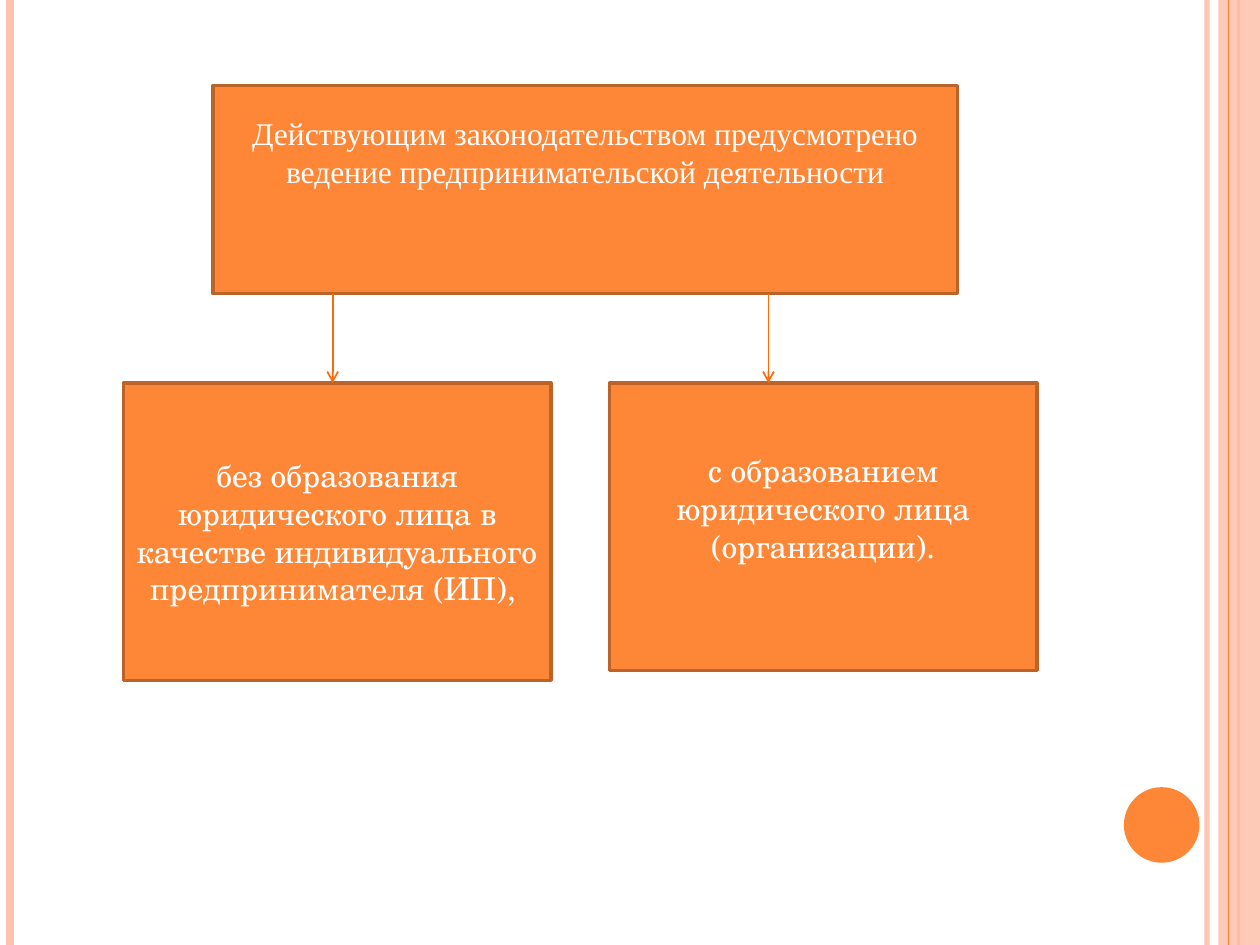
from collections import namedtuple

from lxml import etree
from pptx import Presentation
from pptx.dml.color import RGBColor
from pptx.enum.shapes import MSO_CONNECTOR, MSO_SHAPE
from pptx.enum.text import MSO_ANCHOR, PP_ALIGN
from pptx.oxml.ns import qn
from pptx.util import Inches, Pt

Box = namedtuple("Box", "left top width height")

PAGE = Box(0, 0, 10, 7.5)
ORANGE, PINK, BROWN, ARROW, WHITE = "FE8637", "FEC3AE", "BC6329", "FF6B0A", "FFFFFF"
SERIF, SCHOOL = "Times New Roman", "TeX Gyre Schola"
LINE_HEIGHT = 0.3


def color(hex_string):
    return RGBColor.from_string(hex_string)


def set_alpha(properties, percent):
    """Make the first solid colour inside the given XML partly transparent."""
    solid = next(properties.iter(qn("a:srgbClr")))
    etree.SubElement(solid, qn("a:alpha"), val=str(percent * 1000))


def add_block(slide, kind, box, fill, line=None, alpha=None):
    shape = slide.shapes.add_shape(kind, *map(Inches, box))
    shape.shadow.inherit = False
    shape.fill.solid()
    shape.fill.fore_color.rgb = color(fill)
    if alpha:
        set_alpha(shape.fill._xPr, alpha)
    if line:
        shape.line.color.rgb = color(line)
        shape.line.width = Pt(2)
    else:
        shape.line.fill.background()
    return shape


def add_vertical(slide, x, top, bottom, line, width, alpha=None, arrow=False):
    connector = slide.shapes.add_connector(
        MSO_CONNECTOR.STRAIGHT, *map(Inches, (x, top, x, bottom)))
    connector.line.color.rgb = color(line)
    connector.line.width = Pt(width)
    properties = connector._element.spPr
    if alpha:
        set_alpha(properties, alpha)
    if arrow:
        etree.SubElement(properties.find(qn("a:ln")), qn("a:tailEnd"), type="arrow")
    etree.SubElement(properties, qn("a:effectLst"))


def write(shape, text, font=SCHOOL, size=18, fill=WHITE, raised_lines=0):
    """Centre the text, lifted as if some lines stood free below it."""
    frame = shape.text_frame
    frame.word_wrap = True
    frame.vertical_anchor = MSO_ANCHOR.MIDDLE
    frame.margin_bottom = Inches(0.05 + raised_lines * LINE_HEIGHT)
    paragraph = frame.paragraphs[0]
    paragraph.alignment = PP_ALIGN.CENTER
    run = paragraph.add_run()
    run.text = text
    run.font.name = font
    run.font.size = Pt(size)
    run.font.color.rgb = color(fill)


def draw_frame(slide, box):
    """Place the edge stripes and the circle of the page design."""
    def stripe(share, *style, **options):
        add_vertical(slide, box.left + share * box.width, box.top,
                     box.top + box.height, *style, **options)

    stripe(0.958, PINK, 3, alpha=93)
    stripe(0.008, PINK, 4.5)
    stripe(0.983, ORANGE, 1.5)
    band = Box(box.left + 0.967 * box.width, box.top, 0.033 * box.width, box.height)
    add_block(slide, MSO_SHAPE.RECTANGLE, band, PINK, alpha=87)
    stripe(0.975, ORANGE, 0.75)
    diameter = 0.06 * box.width
    circle = Box(box.left + 0.892 * box.width, box.top + 0.833 * box.height,
                 diameter, diameter)
    add_block(slide, MSO_SHAPE.OVAL, circle, ORANGE)


def draw_diagram(slide, box):
    """Place the heading block, its two branches and the arrows between them."""
    def part(left, top, width, height):
        return Box(box.left + left * box.width, box.top + top * box.height,
                   width * box.width, height * box.height)

    heading = part(0.098, 0, 0.815, 0.35)
    branches = [
        (part(0, 0.5, 0.468, 0.5), 0.229, 0,
         "без образования юридического лица в качестве индивидуального "
         "предпринимателя (ИП), "),
        (part(0.532, 0.5, 0.468, 0.483), 0.706, 1,
         "с образованием юридического лица (организации)."),
    ]
    block = add_block(slide, MSO_SHAPE.RECTANGLE, heading, ORANGE, BROWN)
    write(block, "Действующим законодательством предусмотрено ведение "
          "предпринимательской деятельности", font=SERIF, raised_lines=2)
    for branch, arrow_share, raised_lines, text in branches:
        block = add_block(slide, MSO_SHAPE.RECTANGLE, branch, ORANGE, BROWN)
        write(block, text, raised_lines=raised_lines)
        add_vertical(slide, box.left + arrow_share * box.width,
                     heading.top + heading.height, branch.top, ARROW, 1, arrow=True)


def main():
    presentation = Presentation()
    presentation.slide_width = Inches(PAGE.width)
    presentation.slide_height = Inches(PAGE.height)
    slide = presentation.slides.add_slide(presentation.slide_layouts[6])
    draw_frame(slide, PAGE)
    draw_diagram(slide, Box(0.98, 0.68, 7.25, 4.72))
    presentation.save("out.pptx")


if __name__ == "__main__":
    main()
